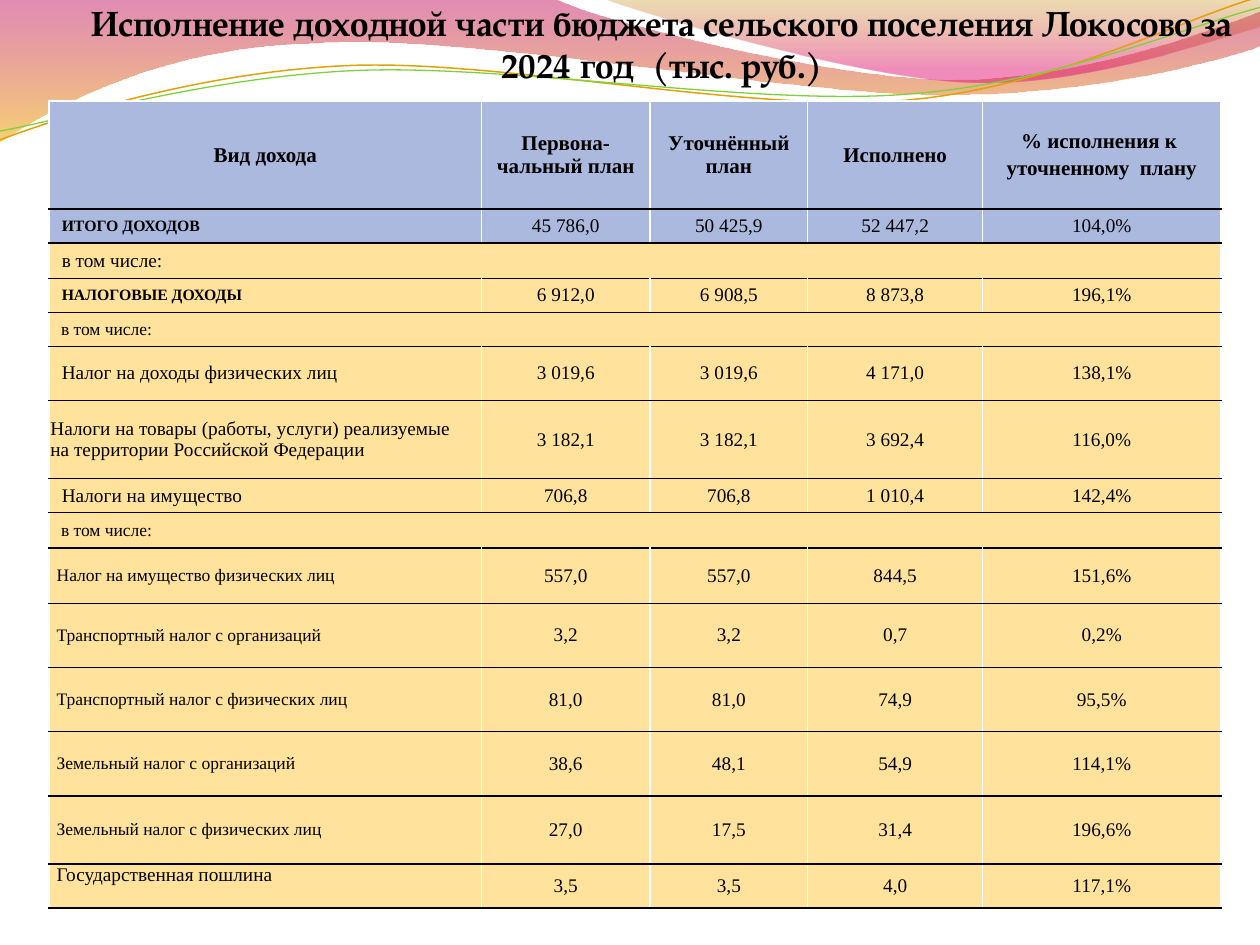
import math
import pptx
import pptx.util
import pptx.dml.color
import pptx.enum.text
import pptx.oxml
import pptx.oxml.ns
import lxml.etree

Inches, Pt = pptx.util.Inches, pptx.util.Pt
RGB = pptx.dml.color.RGBColor
ALIGN, ANCHOR = pptx.enum.text.PP_ALIGN, pptx.enum.text.MSO_ANCHOR
qn = pptx.oxml.ns.qn

HUES = {"black": "000000", "white": "FFFFFF", "blue": "ABB9DE", "sand": "FFE39D",
        "plum": "BD0059", "amber": "F0AB00", "ochre": "C38B00", "pink": "E1006B",
        "gold": "E0A209", "green": "7FD13B"}
TITLE = "Исполнение доходной части бюджета сельского поселения Локосово за 2024 год  (тыс. руб.)"
HEAD = ["Вид дохода", "Первона-чальный план", "Уточнённый план", "Исполнено",
        "% исполнения к \nуточненному  плану"]
WIDE = [3.43, 1.34, 1.25, 1.39, 1.89]

STYLES = {
    "total": {"size": 9, "bold": True, "left": 0.1},
    "part": {"size": 11, "left": 0.1},
    "note": {"size": 10, "left": 0.06},
    "goods": {"size": 11, "left": 0.01},
    "item": {"size": 10, "left": 0.06},
    "duty": {"size": 11, "left": 0.06, "anchor": ANCHOR.TOP},
}
ROWS = [
    (0.27, "total", "ИТОГО ДОХОДОВ", "45 786,0", "50 425,9", "52 447,2", "104,0%"),
    (0.28, "part", "в том числе:"),
    (0.27, "total", "НАЛОГОВЫЕ ДОХОДЫ", "6 912,0", "6 908,5", "8 873,8", "196,1%"),
    (0.27, "note", " в том числе:"),
    (0.43, "part", "Налог на доходы физических лиц", "3 019,6", "3 019,6", "4 171,0", "138,1%"),
    (0.62, "goods", "Налоги на товары (работы, услуги) реализуемые \vна территории Российской Федерации",
     "3 182,1", "3 182,1", "3 692,4", "116,0%"),
    (0.27, "part", "Налоги на имущество", "706,8", "706,8", "1 010,4", "142,4%"),
    (0.28, "note", " в том числе:"),
    (0.44, "item", "Налог на имущество физических лиц", "557,0", "557,0", "844,5", "151,6%"),
    (0.51, "item", "Транспортный налог с организаций", "3,2", "3,2", "0,7", "0,2%"),
    (0.51, "item", "Транспортный налог с физических лиц", "81,0", "81,0", "74,9", "95,5%"),
    (0.51, "item", "Земельный налог с организаций", "38,6", "48,1", "54,9", "114,1%"),
    (0.54, "item", "Земельный налог с физических лиц", "27,0", "17,5", "31,4", "196,6%"),
    (0.35, "duty", "Государственная пошлина", "3,5", "3,5", "4,0", "117,1%"),
]

WAVES = [
    {"path": [(0, 0), (4.4, -0.01), (4.76, 0.17, 6.64, 0.63, 7.58, 0.63),
              (8.53, 0.63, 9.58, 0.26, 10, 0.09), (10.01, 0.36),
              (9.83, 0.44, 8.7, 0.76, 7.46, 0.75), (6.22, 0.75, 3.82, 0.28, 2.57, 0.34),
              (1.29, 0.36, 0.46, 0.83, -0.01, 1.13)],
     "stops": [(0, "plum", 45), (1, "amber", 55)]},
    {"path": [(4.79, -0.01), (5.09, 0.11, 6.82, 0.62, 7.69, 0.65),
              (8.56, 0.69, 9.61, 0.32, 10, 0.21), (10, 0)],
     "stops": [(0, "ochre", 30), (0.8, "pink", 45)]},
    {"path": [(0, 1.11), (0.48, 0.93, 1.58, 0.57, 2.77, 0.52),
              (3.95, 0.47, 5.93, 0.89, 7.13, 0.8), (8.33, 0.71, 9.38, 0.15, 9.98, -0.02)],
     "line": ("gold", 0.85), "mid": (4.99, 0.57)},
    {"path": [(0, 1.04), (0.47, 0.96, 1.64, 0.61, 2.83, 0.56),
              (4.03, 0.51, 5.97, 0.84, 7.17, 0.75), (8.36, 0.67, 9.41, 0.21, 10, 0.06)],
     "line": ("green", 0.75), "mid": (5, 0.59)},
]
TILT = 2.7


def hue(name):
    return RGB.from_string(HUES[name])


def put(frame, text, size=11, bold=False, font="Times New Roman", align=ALIGN.CENTER, gap=0):
    frame.text = text
    frame.word_wrap = True
    for para in frame.paragraphs:
        para.alignment = align
        para.space_before = Pt(gap)
        for run in para.runs:
            run.font.size, run.font.bold, run.font.name = Pt(size), bold, font
            run.font.color.rgb = hue("black")


def turn(spot, mid):
    x, y = spot[0] - mid[0], spot[1] - mid[1]
    cos, sin = math.cos(math.radians(TILT)), math.sin(math.radians(TILT))
    return mid[0] + x * cos - y * sin, mid[1] + x * sin + y * cos


def bend(shape, path):
    lines = list(shape._element.iter(qn("a:lnTo")))
    for part in path[1:]:
        group, lines = lines[:len(part) // 2], lines[len(part) // 2:]
        if len(group) == 3:
            curve = lxml.etree.Element(qn("a:cubicBezTo"))
            group[0].addprevious(curve)
            for line in group:
                curve.append(line[0])
                line.getparent().remove(line)


def wave(slide, path, stops=None, line=None, mid=None):
    spots = [part[i:i + 2] for part in path for i in range(0, len(part), 2)]
    if mid:
        spots = [turn(spot, mid) for spot in spots]
    spots = [(Inches(x), Inches(y)) for x, y in spots]
    pen = slide.shapes.build_freeform(*spots[0])
    pen.add_line_segments(spots[1:], close=bool(stops))
    shape = pen.convert_to_shape()
    bend(shape, path)
    shape.shadow.inherit = False
    if line:
        shape.rotation = 360 - TILT
        shape.fill.background()
        shape.line.color.rgb, shape.line.width = hue(line[0]), Pt(line[1])
        return
    shape.line.fill.background()
    shape.fill.gradient()
    shape.fill.gradient_angle = 270
    for stop, (place, name, alpha) in zip(shape.fill.gradient_stops, stops):
        stop.position = place
        stop.color.rgb = hue(name)
    tints = shape._element.spPr.iter(qn("a:srgbClr"))
    for tint, (place, name, alpha) in zip(list(tints), stops):
        lxml.etree.SubElement(tint, qn("a:alpha"), val=str(alpha * 1000))


def edge(cell, top):
    props = cell._tc.get_or_add_tcPr()
    sides = {"L": "white", "R": "white", "T": top, "B": "black"}
    for spot, (side, name) in enumerate(sides.items()):
        rule = pptx.oxml.parse_xml(
            f'<a:ln{side} {pptx.oxml.ns.nsdecls("a")} w="12700"><a:solidFill>'
            f'<a:srgbClr val="{HUES[name]}"/></a:solidFill></a:ln{side}>')
        props.insert(spot, rule)


def dress(cell, fill, top="black", left=0.1, pad=0, anchor=ANCHOR.MIDDLE):
    cell.fill.solid()
    cell.fill.fore_color.rgb = hue(fill)
    cell.margin_left = cell.margin_right = Inches(left)
    cell.margin_top = cell.margin_bottom = Inches(pad)
    cell.vertical_anchor = anchor
    edge(cell, top)


def grid(slide):
    tall = [0.86] + [row[0] for row in ROWS]
    table = slide.shapes.add_table(len(tall), len(WIDE), Inches(0.39), Inches(0.8),
                                   Inches(sum(WIDE)), Inches(sum(tall))).table
    table.first_row = table.horz_banding = False
    for col, size in zip(table.columns, WIDE):
        col.width = Inches(size)
    for row, size in zip(table.rows, tall):
        row.height = Inches(size)
    for c, text in enumerate(HEAD):
        cell = table.cell(0, c)
        put(cell.text_frame, text, size=12, bold=True, gap=2.4)
        dress(cell, "blue", top="white", pad=0.05)
    for r, (size, kind, label, *vals) in enumerate(ROWS, 1):
        fill = "blue" if r == 1 else "sand"
        style = STYLES[kind]
        first = table.cell(r, 0)
        put(first.text_frame, label, size=style["size"], bold=style.get("bold", False),
            align=ALIGN.LEFT)
        dress(first, fill, left=style["left"], anchor=style.get("anchor", ANCHOR.MIDDLE))
        for c in range(1, len(WIDE)):
            cell = table.cell(r, c)
            dress(cell, fill)
            if vals:
                put(cell.text_frame, vals[c - 1])
        if not vals:
            first.merge(table.cell(r, len(WIDE) - 1))


def main():
    deck = pptx.Presentation()
    deck.slide_width, deck.slide_height = Inches(10), Inches(7.5)
    slide = deck.slides.add_slide(deck.slide_layouts[5])
    for item in WAVES:
        wave(slide, **item)
    title = slide.shapes.title
    slide.shapes._spTree.append(title._element)
    title.left, title.top, title.width, title.height = map(Inches, (0.67, 0.47, 9.17, 0.21))
    frame = title.text_frame
    put(frame, TITLE, size=20, bold=True, font="TeX Gyre Pagella")
    frame.auto_size = pptx.enum.text.MSO_AUTO_SIZE.NONE
    frame.vertical_anchor = ANCHOR.BOTTOM
    frame.margin_left = frame.margin_right = frame.margin_bottom = 0
    frame.margin_top = Inches(0.05)
    grid(slide)
    deck.save("out.pptx")


if __name__ == "__main__":
    main()
